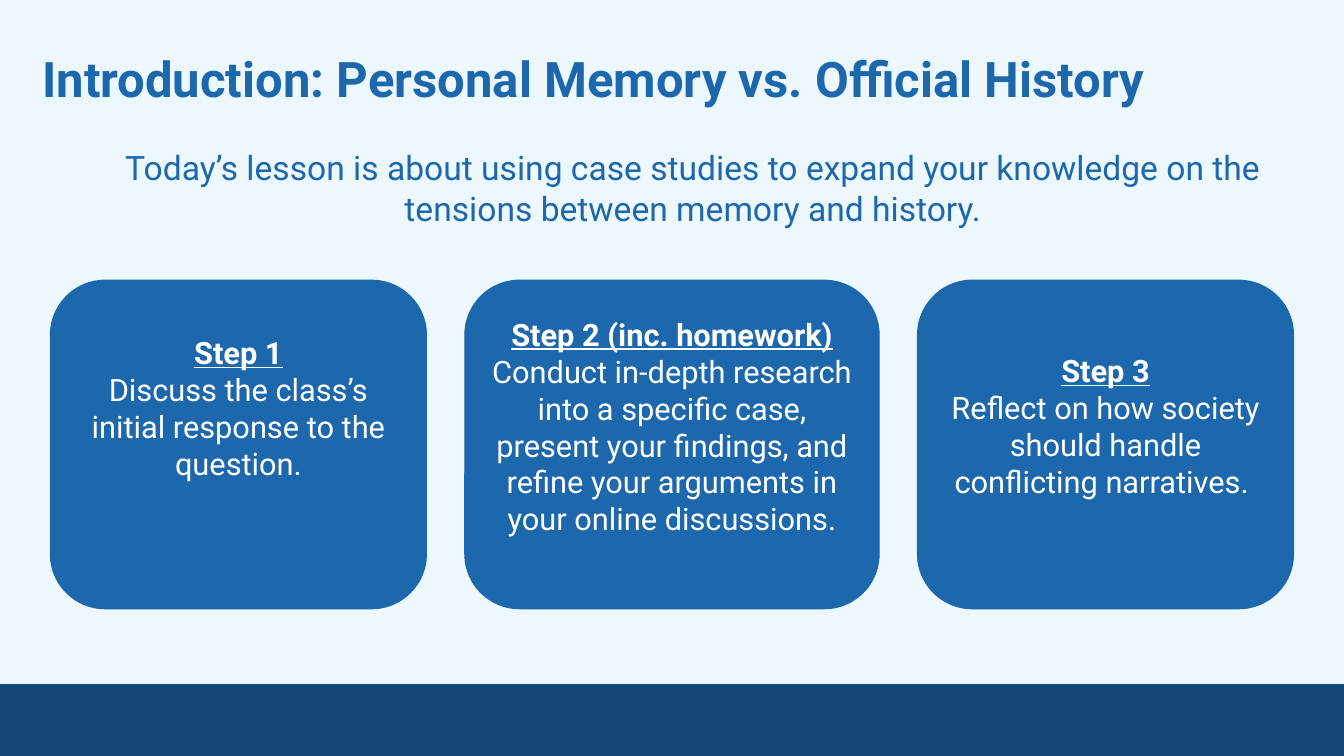
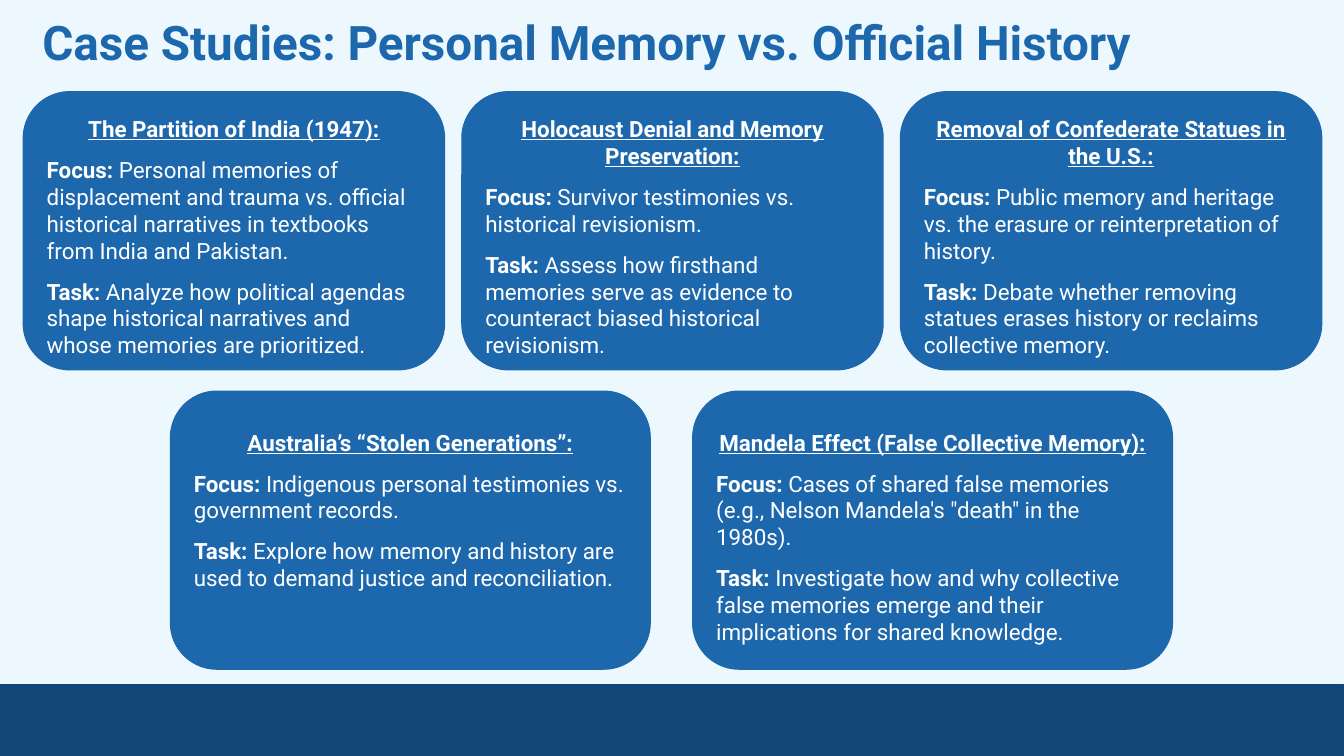
"""Build two lesson slides on personal memory and official history."""

from dataclasses import dataclass

from pptx import Presentation
from pptx.dml.color import RGBColor
from pptx.enum.shapes import MSO_SHAPE
from pptx.enum.text import MSO_ANCHOR, MSO_AUTO_SIZE, PP_ALIGN
from pptx.util import Inches, Pt

FONT = "Roboto"
PALE = RGBColor(0xEC, 0xF8, 0xFE)
BLUE = RGBColor(0x1D, 0x67, 0xAC)
NAVY = RGBColor(0x14, 0x47, 0x77)
WHITE = RGBColor(0xFF, 0xFF, 0xFF)
WIDTH, HEIGHT = 13.33, 7.5
BAND_TOP = 6.79


@dataclass(frozen=True)
class Step:
    heading: str
    text: str
    width: float
    inset: float


@dataclass(frozen=True)
class Case:
    heading: str
    focus: str
    task: str


@dataclass(frozen=True)
class CaseRow:
    left: float
    top: float
    width: float
    pitch: float
    inset: float
    cases: tuple[Case, ...]


STEPS = (
    Step("Step 1", "Discuss the class’s initial response to the question.", 3.73, 0.37),
    Step(
        "Step 2 (inc. homework)",
        "Conduct in-depth research into a specific case, present your findings, "
        "and refine your arguments in your online discussions.",
        4.11,
        0.19,
    ),
    Step("Step 3", "Reflect on how society should handle conflicting narratives. ", 3.73, 0.55),
)

CASE_ROWS = (
    CaseRow(0.23, 0.91, 4.18, 4.35, 0.1, (
        Case(
            "The Partition of India (1947):",
            "Personal memories of displacement and trauma vs. official historical "
            "narratives in textbooks from India and Pakistan.",
            "Analyze how political agendas shape historical narratives and whose "
            "memories are prioritized.",
        ),
        Case(
            "Holocaust Denial and Memory Preservation:",
            "Survivor testimonies vs. historical revisionism.",
            "Assess how firsthand memories serve as evidence to counteract biased "
            "historical revisionism.",
        ),
        Case(
            "Removal of Confederate Statues in the U.S.:",
            "Public memory and heritage vs. the erasure or reinterpretation of history.",
            "Debate whether removing statues erases history or reclaims collective memory.",
        ),
    )),
    CaseRow(1.69, 3.88, 4.76, 5.18, 0.24, (
        Case(
            "Australia’s “Stolen Generations”:",
            "Indigenous personal testimonies vs. government records.",
            "Explore how memory and history are used to demand justice and reconciliation.",
        ),
        Case(
            "Mandela Effect (False Collective Memory):",
            "Cases of shared false memories (e.g., Nelson Mandela's \"death\" in the 1980s).",
            "Investigate how and why collective false memories emerge and their "
            "implications for shared knowledge.",
        ),
    )),
)


def add_text(p, text: str, *, size: float, color: RGBColor = WHITE,
             bold: bool = False, underline: bool = False) -> None:
    """Append a formatted run to a paragraph."""
    r = p.add_run()
    r.text = text
    r.font.name = FONT
    r.font.size = Pt(size)
    r.font.color.rgb = color
    r.font.bold = bold
    r.font.underline = underline


def set_frame(tf, inset: float, top: float | None = None) -> None:
    """Wrap a text frame, anchor it at the top and set its insets."""
    tf.word_wrap = True
    tf.auto_size = MSO_AUTO_SIZE.NONE
    tf.vertical_anchor = MSO_ANCHOR.TOP
    tf.margin_left = tf.margin_right = tf.margin_bottom = Inches(inset)
    tf.margin_top = Inches(inset if top is None else top)


def add_block(s, kind: MSO_SHAPE, left: float, top: float, width: float,
              height: float, color: RGBColor):
    """Draw a flat shape in one colour."""
    sp = s.shapes.add_shape(kind, Inches(left), Inches(top), Inches(width), Inches(height))
    sp.shadow.inherit = False
    sp.fill.solid()
    sp.fill.fore_color.rgb = color
    sp.line.color.rgb = color
    sp.line.width = Pt(0.75)
    return sp


def add_card(s, left: float, top: float, width: float, height: float,
             inset: float, heading: str, size: float):
    """Draw a rounded card with its heading and return its text frame."""
    sp = add_block(s, MSO_SHAPE.ROUNDED_RECTANGLE, left, top, width, height, BLUE)
    sp.adjustments[0] = 0.167
    tf = sp.text_frame
    set_frame(tf, 0.1, inset)
    p = tf.paragraphs[0]
    p.alignment = PP_ALIGN.CENTER
    add_text(p, heading, size=size, bold=True, underline=True)
    return tf


def add_slide(prs, title: str, top: float, height: float, size: float):
    """Add a slide with a placed and formatted title."""
    s = prs.slides.add_slide(prs.slide_layouts[5])
    sp = s.shapes.title
    sp.left, sp.top, sp.width, sp.height = map(Inches, (0.29, top, 12.19, height))
    set_frame(sp.text_frame, 0.13)
    p = sp.text_frame.paragraphs[0]
    p.alignment = PP_ALIGN.LEFT
    add_text(p, title, size=size, color=BLUE, bold=True)
    return s


def style_master(prs, s) -> None:
    """Give the master its background and bottom band."""
    master = prs.slide_master
    master.background.fill.solid()
    master.background.fill.fore_color.rgb = PALE
    band = add_block(s, MSO_SHAPE.RECTANGLE, 0, BAND_TOP, WIDTH, HEIGHT - BAND_TOP, NAVY)
    master.element.cSld.spTree.append(band.element)


def add_steps(s) -> None:
    """Draw the lead sentence and the row of step cards."""
    box = s.shapes.add_textbox(Inches(0.91), Inches(1.36), Inches(11.92), Inches(1.41))
    set_frame(box.text_frame, 0.1)
    p = box.text_frame.paragraphs[0]
    p.alignment = PP_ALIGN.CENTER
    add_text(p, "Today’s lesson is about using case studies to expand your knowledge "
             "on the tensions between memory and history.", size=24, color=BLUE)
    left, gap = 0.5, 0.38
    for step in STEPS:
        tf = add_card(s, left, 2.78, step.width, 3.26, step.inset, step.heading, 22)
        p = tf.add_paragraph()
        p.alignment = PP_ALIGN.CENTER
        add_text(p, step.text, size=22)
        left += step.width + gap


def add_cases(s) -> None:
    """Draw the rows of case study cards."""
    for row in CASE_ROWS:
        for i, case in enumerate(row.cases):
            tf = add_card(s, row.left + i * row.pitch, row.top, row.width, 2.76,
                          row.inset, case.heading, 16)
            for label, text in (("Focus: ", case.focus), ("Task: ", case.task)):
                p = tf.add_paragraph()
                p.alignment = PP_ALIGN.LEFT
                p.space_before = Pt(10)
                add_text(p, label, size=16, bold=True)
                add_text(p, text, size=16)


def main() -> None:
    """Build and save the presentation."""
    prs = Presentation()
    prs.slide_width, prs.slide_height = Inches(WIDTH), Inches(HEIGHT)
    s = add_slide(prs, "Introduction: Personal Memory vs. Official History", 0.35, 0.86, 35)
    style_master(prs, s)
    add_steps(s)
    s = add_slide(prs, "Case Studies: Personal Memory vs. Official History", 0, 0.84, 34)
    add_cases(s)
    prs.save("out.pptx")


if __name__ == "__main__":
    main()
